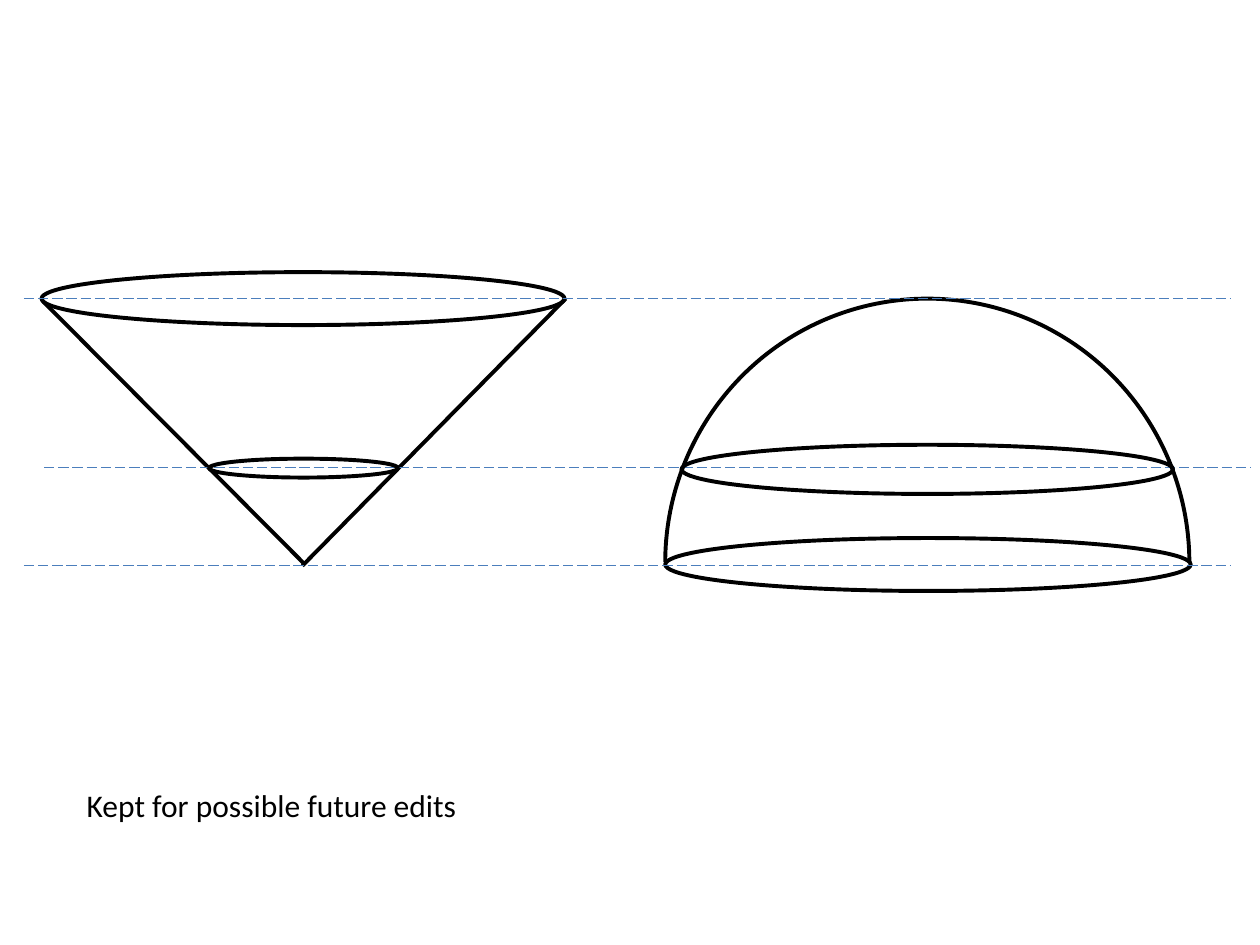
from typing import NamedTuple

from lxml.etree import SubElement
from pptx import Presentation
from pptx.dml.color import RGBColor
from pptx.enum.dml import MSO_LINE
from pptx.enum.shapes import MSO_CONNECTOR, MSO_SHAPE
from pptx.enum.text import MSO_AUTO_SIZE
from pptx.oxml.ns import qn
from pptx.util import Inches, Pt

BLACK = "000000"
BLUE = "4B7EBC"
TOP, MID, BASE = 2.37, 3.71, 4.49  # heights of the three levels


class Ring(NamedTuple):
    left: float
    top: float
    width: float
    height: float


class Rule(NamedTuple):
    x1: float
    y1: float
    x2: float
    y2: float


def paint(hue: str) -> RGBColor:
    return RGBColor.from_string(hue)


def draw_curve(shapes, kind: MSO_SHAPE, ring: Ring):
    curve = shapes.add_shape(kind, *map(Inches, ring))
    curve.shadow.inherit = False
    curve.fill.background()
    curve.line.color.rgb = paint(BLACK)
    curve.line.width = Pt(2.25)
    return curve


def draw_rule(shapes, rule: Rule, hue: str, width: float, dashed: bool = False) -> None:
    link = shapes.add_connector(MSO_CONNECTOR.STRAIGHT, *map(Inches, rule))
    link.line.color.rgb = paint(hue)
    link.line.width = Pt(width)
    if dashed:
        link.line.dash_style = MSO_LINE.LONG_DASH
    SubElement(link._element.spPr, qn("a:effectLst"))


def main() -> None:
    deck = Presentation()
    deck.slide_width, deck.slide_height = Inches(10), Inches(7.5)
    shapes = deck.slides.add_slide(deck.slide_layouts[6]).shapes

    # Dome: upper half of a circle
    dome = draw_curve(shapes, MSO_SHAPE.ARC, Ring(5.28, TOP, 4.16, 4.19))
    dome.adjustments[0] = 108.1
    dome.adjustments[1] = 0

    # Dome base and cone rim
    for ring in (Ring(5.28, 4.27, 4.17, 0.42), Ring(0.33, 2.16, 4.15, 0.42)):
        draw_curve(shapes, MSO_SHAPE.OVAL, ring)

    # Cone sides
    for side in (Rule(0.34, 2.39, 2.41, 4.47), Rule(4.49, TOP, 2.4, BASE)):
        draw_rule(shapes, side, BLACK, 2.25)

    # Dashed levels
    for left, level in ((0.19, TOP), (0.19, BASE), (0.35, MID)):
        draw_rule(shapes, Rule(left, level, left + 9.58, level), BLUE, 0.75, True)

    # Cross sections at the middle level
    for ring in (Ring(5.41, 3.53, 3.9, 0.39), Ring(1.66, 3.64, 1.5, 0.15)):
        draw_curve(shapes, MSO_SHAPE.OVAL, ring)

    # Caption
    frame = shapes.add_textbox(*map(Inches, (0.59, 6.19, 3.17, 0.4))).text_frame
    frame.word_wrap = False
    frame.auto_size = MSO_AUTO_SIZE.SHAPE_TO_FIT_TEXT
    line = frame.paragraphs[0]
    line.text = "Kept for possible future edits"
    line.font.name = "Calibri"
    line.font.size = Pt(18)
    line.font.color.rgb = paint(BLACK)

    deck.save("out.pptx")


if __name__ == "__main__":
    main()
